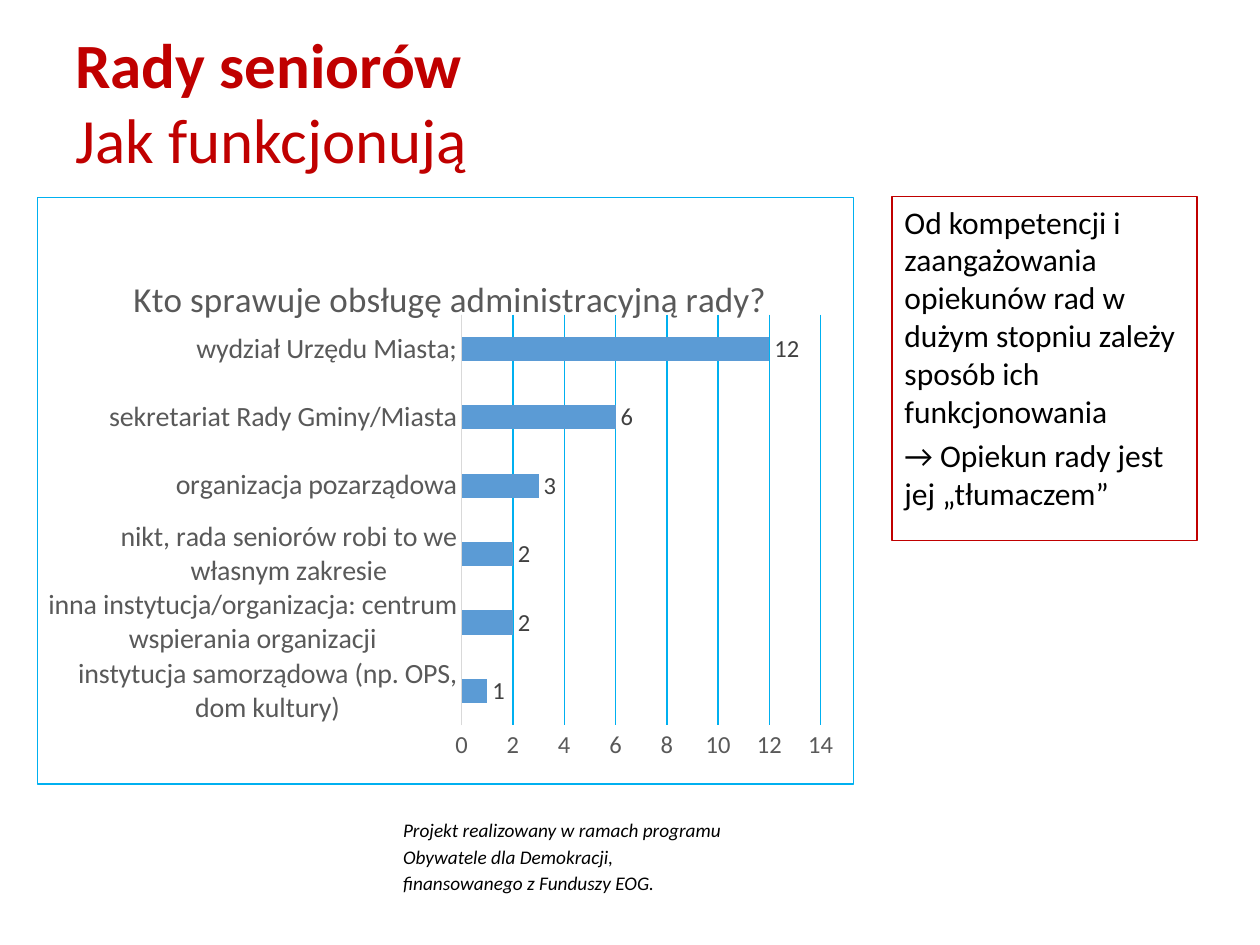
from dataclasses import dataclass

from lxml import etree
from pptx import Presentation
from pptx.chart.data import CategoryChartData
from pptx.dml.color import RGBColor
from pptx.enum.chart import XL_CHART_TYPE, XL_LABEL_POSITION, XL_TICK_MARK
from pptx.enum.shapes import MSO_SHAPE
from pptx.enum.text import MSO_ANCHOR, PP_ALIGN
from pptx.oxml import parse_xml
from pptx.oxml.ns import nsdecls, qn
from pptx.util import Inches, Pt

BAR = XL_CHART_TYPE.BAR_CLUSTERED
OUTSIDE_END = XL_LABEL_POSITION.OUTSIDE_END
NO_TICK = XL_TICK_MARK.NONE
RECTANGLE = MSO_SHAPE.RECTANGLE
TOP, MIDDLE = MSO_ANCHOR.TOP, MSO_ANCHOR.MIDDLE
LEFT = PP_ALIGN.LEFT


@dataclass(frozen=True)
class Theme:
    font: str = "Calibri"
    red: str = "C00000"
    black: str = "000000"
    grid: str = "00B0F0"
    bar: str = "5B9BD5"
    axis_text: str = "595959"
    axis_line: str = "D9D9D9"
    label_text: str = "404040"
    title_size: int = 36
    chart_title_size: int = 20
    body_size: int = 18
    category_size: int = 16
    value_size: int = 14
    footer_size: int = 11


THEME = Theme()

ANSWERS = {
    "instytucja samorządowa (np. OPS, dom kultury)": 1,
    "inna instytucja/organizacja: centrum wspierania organizacji": 2,
    "nikt, rada seniorów robi to we własnym zakresie": 2,
    "organizacja pozarządowa": 3,
    "sekretariat Rady Gminy/Miasta": 6,
    "wydział Urzędu Miasta;": 12,
}


def rgb(color):
    return RGBColor.from_string(color)


def style(font, size, color, bold=False, italic=False):
    font.name, font.size = THEME.font, Pt(size)
    font.bold, font.italic = bold, italic
    font.color.rgb = rgb(color)


def add_span(para, text, size, color, **emphasis):
    span = para.add_run()
    span.text = text
    style(span.font, size, color, **emphasis)


def add_text_box(page, box, anchor=TOP):
    frame = page.shapes.add_textbox(*box).text_frame
    frame.word_wrap = True
    frame.vertical_anchor = anchor
    return frame


def add_title(page, box):
    para = add_text_box(page, box, MIDDLE).paragraphs[0]
    add_span(para, "Rady seniorów", THEME.title_size, THEME.red, bold=True)
    para.add_line_break()
    add_span(para, "Jak funkcjonują", THEME.title_size, THEME.red)


def add_comment(page, box):
    panel = page.shapes.add_shape(RECTANGLE, *box)
    panel.shadow.inherit = False
    panel.fill.background()
    panel.line.color.rgb = rgb(THEME.red)
    panel.line.width = Pt(0.75)
    frame = panel.text_frame
    frame.word_wrap = True
    frame.vertical_anchor = TOP
    texts = (
        "Od kompetencji i zaangażowania opiekunów rad w dużym stopniu "
        "zależy sposób ich funkcjonowania",
        "→ Opiekun rady jest jej „tłumaczem”",
    )
    for index, text in enumerate(texts):
        para = frame.add_paragraph() if index else frame.paragraphs[0]
        para.alignment = LEFT
        if index:
            para.space_before = Pt(0.2 * THEME.body_size)
        add_span(para, text, THEME.body_size, THEME.black)


def add_footer(page, box):
    para = add_text_box(page, box).paragraphs[0]
    para.line_spacing = 1.15
    add_span(para, "Projekt realizowany w ramach programu Obywatele dla Demokracji, "
             "finansowanego z Funduszy EOG.",
             THEME.footer_size, THEME.black, italic=True)


def set_layout(parent, index, target=None, **places):
    """Place a chart part by fractions of the chart's size."""
    for old in parent.findall(qn("c:layout")):
        parent.remove(old)
    layout = parse_xml(f"<c:layout {nsdecls('c')}><c:manualLayout/></c:layout>")
    values = {"layoutTarget": target} if target else {}
    values |= {"xMode": "edge", "yMode": "edge", **places}
    for name, value in values.items():
        etree.SubElement(layout[0], qn(f"c:{name}")).set("val", str(value))
    parent.insert(index, layout)


def add_border(chart):
    border = parse_xml(
        f'<c:spPr {nsdecls("c", "a")}><a:noFill/><a:ln w="{Pt(1)}"><a:solidFill>'
        f'<a:srgbClr val="{THEME.grid}"/></a:solidFill></a:ln></c:spPr>')
    chart.element.find(qn("c:chart")).addnext(border)


def style_axes(chart):
    category, value = chart.category_axis, chart.value_axis
    for axis, size in ((category, THEME.category_size), (value, THEME.value_size)):
        axis.major_tick_mark = axis.minor_tick_mark = NO_TICK
        style(axis.tick_labels.font, size, THEME.axis_text)
    category.format.line.color.rgb = rgb(THEME.axis_line)
    category.format.line.width = Pt(0.75)
    value.format.line.fill.background()
    value.minimum_scale, value.maximum_scale, value.major_unit = 0, 14, 2
    value.tick_labels.number_format = "###0"
    value.tick_labels.number_format_is_linked = False
    value.has_major_gridlines = True
    grid_line = value.major_gridlines.format.line
    grid_line.color.rgb = rgb(THEME.grid)
    grid_line.width = Pt(0.75)


def style_bars(plot):
    plot.gap_width = 182
    plot.vary_by_categories = False
    bars = plot.series[0]
    bars.format.fill.solid()
    bars.format.fill.fore_color.rgb = rgb(THEME.bar)
    labels = bars.data_labels
    labels.show_value = True
    labels.position = OUTSIDE_END
    labels.number_format = "###0"
    labels.number_format_is_linked = False
    style(labels.font, THEME.value_size, THEME.label_text)


def add_answer_chart(page, box):
    data = CategoryChartData(number_format="###0")
    data.categories = list(ANSWERS)
    data.add_series("Series 1", list(ANSWERS.values()))
    chart = page.shapes.add_chart(BAR, *box, data).chart
    style(chart.font, 10, THEME.black)
    chart.has_legend = False
    chart.has_title = True
    add_span(chart.chart_title.text_frame.paragraphs[0],
             "Kto sprawuje obsługę administracyjną rady?",
             THEME.chart_title_size, THEME.axis_text)
    set_layout(chart.element.find(".//" + qn("c:title")), 1, x=0.11, y=0.12)
    set_layout(chart.element.find(".//" + qn("c:plotArea")), 0, "inner",
               x=0.52, y=0.2, w=0.44, h=0.7)
    add_border(chart)
    style_axes(chart)
    style_bars(chart.plots[0])


def inches(*lengths):
    return tuple(Inches(length) for length in lengths)


def main():
    deck = Presentation()
    deck.slide_width, deck.slide_height = inches(10, 7.5)
    page = deck.slides.add_slide(deck.slide_layouts[6])
    add_footer(page, inches(3.1, 6.42, 2.78, 0.74))
    add_title(page, inches(0.5, 0.27, 8.2, 1.06))
    add_comment(page, inches(7.08, 1.56, 2.42, 2.73))
    add_answer_chart(page, inches(0.29, 1.56, 6.49, 4.67))
    deck.save("out.pptx")


if __name__ == "__main__":
    main()
